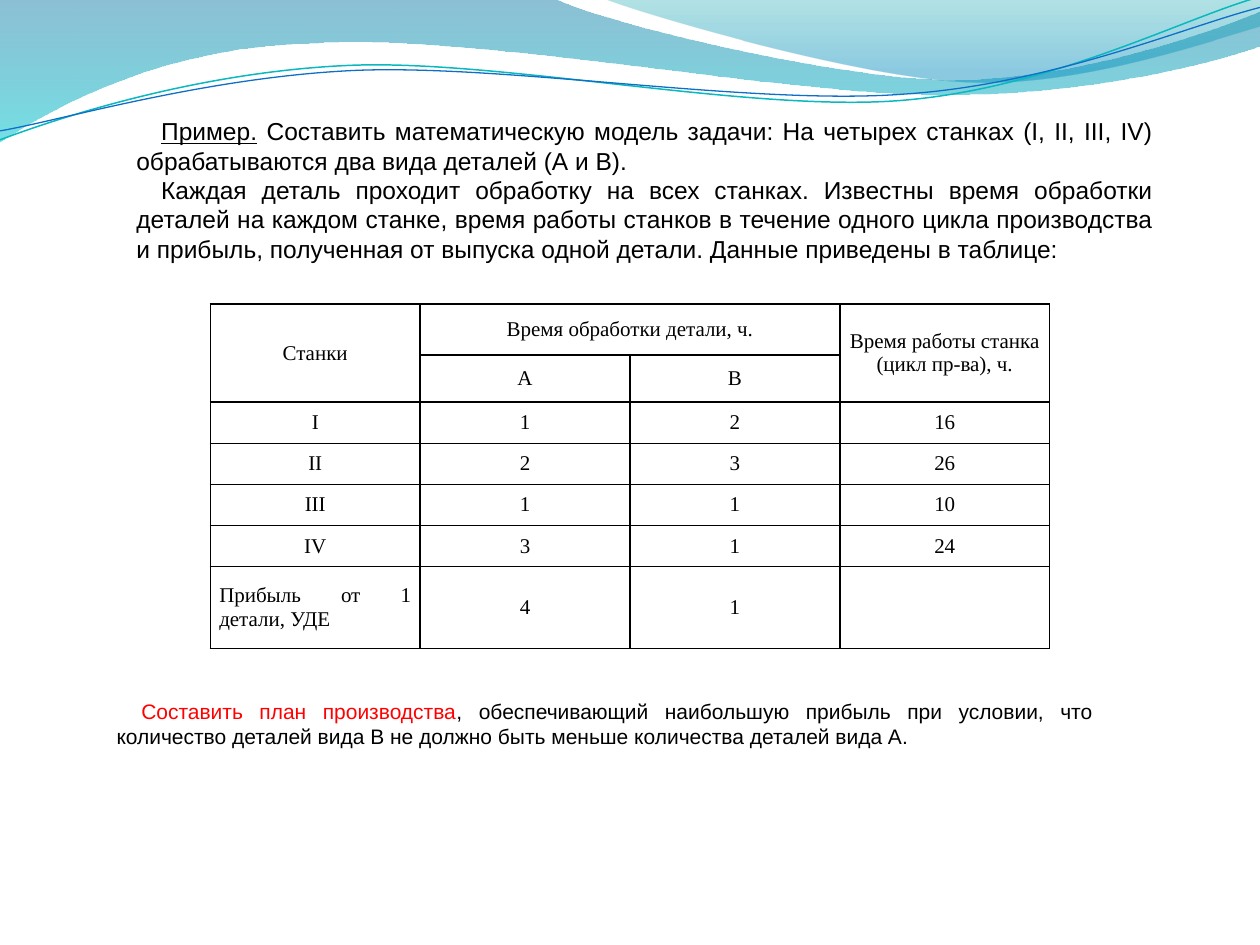
from dataclasses import dataclass
from math import cos, radians, sin

from lxml.etree import SubElement
from pptx import Presentation
from pptx.dml.color import RGBColor
from pptx.enum.text import MSO_ANCHOR, MSO_AUTO_SIZE, PP_ALIGN
from pptx.oxml import parse_xml
from pptx.oxml.ns import nsdecls, qn
from pptx.util import Cm, Pt


@dataclass(frozen=True)
class Theme:
    text: str = "000000"
    accent: str = "FF0000"
    border: str = "000000"
    # Gradient stops: position, colour, opacity in percent
    wide_wave: tuple = ((0, "0074A1", 45), (1, "00C6CF", 55))
    right_wave: tuple = ((0, "00A1A9", 30), (0.8, "008BBF", 45))
    teal_line: str = "0AB8BF"
    blue_line: str = "0F6FC6"
    body_font: str = "Arial"
    table_font: str = "Times New Roman"
    intro_size: int = 14
    task_size: int = 12
    table_size: int = 12


theme = Theme()


def add_curve(slide, box, segments, closed, rotation=0):
    """Draw an outline as it lies on the slide; a segment of one point is
    straight, of three a Bezier curve. The box is the frame before rotation."""
    left, top, width, height = box
    builder = slide.shapes.build_freeform(*(Cm(value) for value in segments[0][0]))
    builder.add_line_segments(
        [tuple(Cm(value) for value in segment[-1]) for segment in segments[1:]], close=closed
    )
    shape = builder.convert_to_shape()
    shape.shadow.inherit = False
    shape.left, shape.top, shape.width, shape.height = (Cm(value) for value in box)
    shape.rotation = rotation

    # Bend the straight steps, in coordinates of the unrotated frame
    outline = shape._element.find(".//" + qn("a:path"))
    outline.set("w", str(Cm(width)))
    outline.set("h", str(Cm(height)))
    cosine, sine = cos(radians(-rotation)), sin(radians(-rotation))
    steps = [step for step in outline if step.tag != qn("a:close")]
    for step, segment in zip(steps, segments):
        if len(segment) == 3:
            step.tag = qn("a:cubicBezTo")
            curve = SubElement(outline, qn("a:cubicBezTo"))
            outline.replace(step, curve)
            step = curve
        for point in list(step):
            step.remove(point)
        for x, y in segment:
            dx, dy = x - left - width / 2, y - top - height / 2
            point = SubElement(step, qn("a:pt"))
            point.set("x", str(Cm(width / 2 + dx * cosine - dy * sine)))
            point.set("y", str(Cm(height / 2 + dx * sine + dy * cosine)))
    return shape


def add_body_text(slide, box, paragraphs, size):
    """Add a justified text box; each run is (text, colour, underline)."""
    text_box = slide.shapes.add_textbox(*(Cm(value) for value in box))
    text_frame = text_box.text_frame
    text_frame.word_wrap = True
    text_frame.auto_size = MSO_AUTO_SIZE.SHAPE_TO_FIT_TEXT
    text_frame.vertical_anchor = MSO_ANCHOR.MIDDLE
    for index, runs in enumerate(paragraphs):
        paragraph = text_frame.add_paragraph() if index else text_frame.paragraphs[0]
        paragraph.alignment = PP_ALIGN.JUSTIFY
        properties = paragraph._p.get_or_add_pPr()
        properties.set("marL", "0")
        properties.set("indent", str(Cm(0.5)))
        for text, color, underline in runs:
            run = paragraph.add_run()
            run.text = text
            run.font.name = theme.body_font
            run.font.size = Pt(size)
            run.font.color.rgb = RGBColor.from_string(color)
            run.font.underline = underline


presentation = Presentation()
presentation.slide_width = Cm(25.4)
presentation.slide_height = Cm(19.05)
slide = presentation.slides.add_slide(presentation.slide_layouts[6])

# Waves along the top edge
waves = [
    (theme.wide_wave, (-0.03, -0.03, 25.46, 2.9), [
        [(0, 0)],
        [(11.18, -0.03)],
        [(12.09, 0.43), (16.87, 1.6), (19.25, 1.6)],
        [(21.67, 1.6), (24.33, 0.66), (25.4, 0.23)],
        [(25.43, 0.91)],
        [(24.97, 1.12), (22.1, 1.93), (18.95, 1.91)],
        [(15.8, 1.91), (9.7, 0.71), (6.53, 0.86)],
        [(3.28, 0.91), (1.17, 2.11), (-0.03, 2.87)],
        [(0, 0)],
    ]),
    (theme.right_wave, (12.17, -0.03, 13.23, 1.78), [
        [(12.17, -0.03)],
        [(12.93, 0.28), (17.32, 1.57), (19.53, 1.65)],
        [(21.74, 1.75), (24.41, 0.81), (25.4, 0.53)],
        [(25.4, 0)],
        [(12.17, -0.03)],
    ]),
]
for stops, box, segments in waves:
    wave = add_curve(slide, box, segments, closed=True)
    wave.line.fill.background()
    wave.fill.gradient()
    wave.fill.gradient_angle = 270
    for stop, (position, color, opacity) in zip(wave.fill.gradient_stops, stops):
        stop.position = position
        stop.color.rgb = RGBColor.from_string(color)
        color_element = stop._gs.find(qn("a:srgbClr"))
        SubElement(color_element, qn("a:alpha")).set("val", str(opacity * 1000))

wave_lines = [
    (theme.teal_line, 0.85, (-0.05, 0.56, 25.45, 1.8), [
        [(0, 2.82)],
        [(1.22, 2.36), (4.01, 1.45), (7.04, 1.32)],
        [(10.03, 1.19), (15.06, 2.26), (18.11, 2.03)],
        [(21.16, 1.8), (23.83, 0.38), (25.35, -0.05)],
    ]),
    (theme.blue_line, 0.75, (-0.05, 0.76, 25.48, 1.47), [
        [(0, 2.64)],
        [(1.19, 2.44), (4.17, 1.55), (7.19, 1.42)],
        [(10.24, 1.3), (15.16, 2.13), (18.21, 1.9)],
        [(21.23, 1.7), (23.9, 0.53), (25.4, 0.15)],
    ]),
]
for color, width, box, segments in wave_lines:
    wave_line = add_curve(slide, box, segments, closed=False, rotation=357.3)
    wave_line.fill.background()
    wave_line.line.color.rgb = RGBColor.from_string(color)
    wave_line.line.width = Pt(width)

# Table of machines
rows = [
    ["Станки", "Время обработки детали, ч.", "", "Время работы станка \n(цикл пр-ва), ч."],
    ["", "А", "В", ""],
    ["I", "1", "2", "16"],
    ["II", "2", "3", "26"],
    ["III", "1", "1", "10"],
    ["IV", "3", "1", "24"],
    ["Прибыль от 1 детали, УДЕ", "4", "1", ""],
]
row_heights = [1.03] + [0.83] * 5 + [1.65]
first_machine, last_machine = 2, 5
table = slide.shapes.add_table(
    len(rows), len(rows[0]), Cm(4.24), Cm(6.13), Cm(16.93), Cm(sum(row_heights))
).table
table.first_row = False
table.horz_banding = False
for column in table.columns:
    column.width = Cm(4.23)
for row, height in zip(table.rows, row_heights):
    row.height = Cm(height)
for start, end in [((0, 0), (1, 0)), ((0, 1), (0, 2)), ((0, 3), (1, 3))]:
    table.cell(*start).merge(table.cell(*end))

for row_index, texts in enumerate(rows):
    for column_index, text in enumerate(texts):
        cell = table.cell(row_index, column_index)
        cell.fill.background()
        cell.vertical_anchor = MSO_ANCHOR.MIDDLE
        cell.margin_left = cell.margin_right = Cm(0.18)
        cell.margin_top = cell.margin_bottom = 0
        thin_top = first_machine < row_index <= last_machine
        thin_bottom = first_machine <= row_index < last_machine
        widths = [1, 1, 0.5 if thin_top else 1, 0.5 if thin_bottom else 1]
        for position, (side, width) in enumerate(zip("LRTB", widths)):
            cell._tc.get_or_add_tcPr().insert(position, parse_xml(
                f'<a:ln{side} {nsdecls("a")} w="{Pt(width)}"><a:solidFill>'
                f'<a:srgbClr val="{theme.border}"/></a:solidFill></a:ln{side}>'
            ))
        if not text:
            continue
        cell.text_frame.text = text
        is_profit_label = row_index == len(rows) - 1 and column_index == 0
        for paragraph in cell.text_frame.paragraphs:
            paragraph.alignment = PP_ALIGN.JUSTIFY if is_profit_label else PP_ALIGN.CENTER
            for run in paragraph.runs:
                run.font.name = theme.table_font
                run.font.size = Pt(theme.table_size)
                run.font.color.rgb = RGBColor.from_string(theme.text)

# Problem statement above the table and the task below it
add_body_text(slide, (2.5, 2.2, 21, 3.25), [
    [("Пример.", theme.text, True),
     (" Составить математическую модель задачи: На четырех станках (I, II, III, IV) "
      "обрабатываются два вида деталей (А и В). ", theme.text, False)],
    [("Каждая деталь проходит обработку на всех станках. Известны время обработки "
      "деталей на каждом станке, время работы станков в течение одного цикла "
      "производства и прибыль, полученная от выпуска одной детали. "
      "Данные приведены в таблице:", theme.text, False)],
], theme.intro_size)
add_body_text(slide, (2.1, 13.95, 20.19, 1.27), [
    [("Составить план производства", theme.accent, False),
     (", обеспечивающий наибольшую прибыль при условии, что количество деталей "
      "вида В не должно быть меньше количества деталей вида А.", theme.text, False)],
], theme.task_size)

presentation.save("out.pptx")
